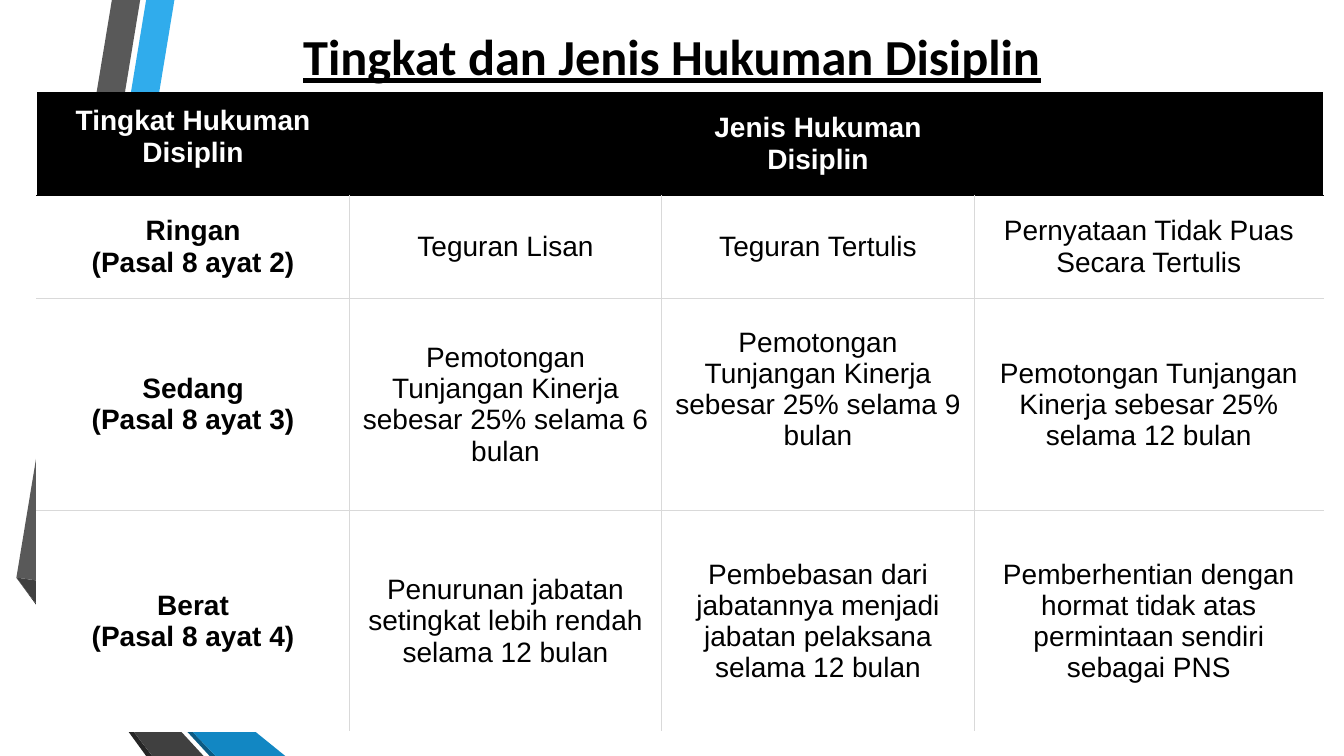
from lxml import etree
from pptx import Presentation
from pptx.dml.color import RGBColor
from pptx.enum.text import MSO_ANCHOR as Anchor, PP_ALIGN as Align
from pptx.oxml.ns import qn
from pptx.util import Pt

BLACK = RGBColor(0x00, 0x00, 0x00)
WHITE = RGBColor(0xFF, 0xFF, 0xFF)
RULE_GREY = RGBColor(0xD9, 0xD9, 0xD9)
SKY = RGBColor(0x30, 0xAC, 0xEC)
BLUE = RGBColor(0x12, 0x87, 0xC3)
NAVY = RGBColor(0x0C, 0x5A, 0x82)
GREY = RGBColor(0x59, 0x59, 0x59)
DARK_GREY = RGBColor(0x40, 0x40, 0x40)
CHARCOAL = RGBColor(0x26, 0x26, 0x26)

SLIDE_WIDTH, SLIDE_HEIGHT = 960, 540
CELL_MARGIN = 9.36

# Folded ribbons at the left edge, from back to front
RIBBONS = [
    (SKY, [(36, 416.2), (55.4, 419.8), (124.6, 0), (104.4, 0)]),
    (GREY, [(100.1, 0), (79.9, 0), (11.7, 412.6), (31.7, 415.4)]),
    (CHARCOAL, [(11.7, 412.6), (104.4, SLIDE_HEIGHT), (108.7, SLIDE_HEIGHT)]),
    (NAVY, [(36, 416.9), (149.8, SLIDE_HEIGHT), (154.1, SLIDE_HEIGHT)]),
    (BLUE, [(36, 416.9), (154.1, SLIDE_HEIGHT), (203.8, SLIDE_HEIGHT),
            (55.4, 419.8), (36, 416.2)]),
    (DARK_GREY, [(145.4, SLIDE_HEIGHT), (34.6, 419.8), (31, 415.4),
                 (11.7, 412.6), (108.7, SLIDE_HEIGHT)]),
]

COLUMN_WIDTHS = [223.2, 223.2, 223.2, 249.4]
ROW_HEIGHTS = [73.5, 73.5, 152, 157.5]
ROWS = [
    ["Tingkat Hukuman Disiplin", "", "Jenis Hukuman Disiplin", ""],
    ["Ringan\n(Pasal 8 ayat 2)", "Teguran Lisan", "Teguran Tertulis",
     "Pernyataan Tidak Puas Secara Tertulis"],
    ["Sedang\n(Pasal 8 ayat 3)",
     "Pemotongan Tunjangan Kinerja sebesar 25% selama 6 bulan",
     "Pemotongan Tunjangan Kinerja sebesar 25% selama 9 bulan",
     "Pemotongan Tunjangan Kinerja sebesar 25% selama 12 bulan"],
    ["Berat\n(Pasal 8 ayat 4)",
     "Penurunan jabatan setingkat lebih rendah selama 12 bulan",
     "Pembebasan dari jabatannya menjadi jabatan pelaksana selama 12 bulan",
     "Pemberhentian dengan hormat tidak atas permintaan sendiri sebagai PNS"],
]


def add_border(cell, side, color):
    """Draw one cell edge; side is L, R, T or B. Call before filling the cell."""
    properties = cell._tc.get_or_add_tcPr()
    line = etree.SubElement(properties, qn(f"a:ln{side}"), w=str(Pt(0.75)))
    fill = etree.SubElement(line, qn("a:solidFill"))
    etree.SubElement(fill, qn("a:srgbClr"), val=str(color))


deck = Presentation()
deck.slide_width, deck.slide_height = Pt(SLIDE_WIDTH), Pt(SLIDE_HEIGHT)
page = deck.slides.add_slide(deck.slide_layouts[5])

for color, points in RIBBONS:
    corners = [(Pt(x), Pt(y)) for x, y in points]
    builder = page.shapes.build_freeform(*corners[0], scale=1.0)
    builder.add_line_segments(corners[1:], close=True)
    ribbon = builder.convert_to_shape()
    ribbon.shadow.inherit = False
    ribbon.fill.solid()
    ribbon.fill.fore_color.rgb = color
    ribbon.line.fill.background()

frame = page.shapes.add_table(len(ROWS), len(COLUMN_WIDTHS), Pt(26.3), Pt(66),
                              Pt(sum(COLUMN_WIDTHS)), Pt(sum(ROW_HEIGHTS)))
table = frame.table
table.horz_banding = False
for column, width in zip(table.columns, COLUMN_WIDTHS):
    column.width = Pt(width)
for row, height in zip(table.rows, ROW_HEIGHTS):
    row.height = Pt(height)

last_row, last_column = len(ROWS) - 1, len(COLUMN_WIDTHS) - 1
for i, texts in enumerate(ROWS):
    is_header = i == 0
    for j, text in enumerate(texts):
        cell = table.cell(i, j)
        rule = BLACK if is_header else RULE_GREY
        if j > 0:
            add_border(cell, "L", rule)
        if j < last_column:
            add_border(cell, "R", rule)
        add_border(cell, "T", BLACK if i <= 1 else RULE_GREY)
        if i < last_row:
            add_border(cell, "B", rule)
        cell.fill.solid()
        cell.fill.fore_color.rgb = BLACK if is_header else WHITE
        cell.margin_left = cell.margin_right = Pt(CELL_MARGIN)
        cell.margin_top = cell.margin_bottom = Pt(CELL_MARGIN)
        cell.vertical_anchor = Anchor.TOP if i == j == 0 else Anchor.MIDDLE
        if not text:
            continue
        for k, line_text in enumerate(text.split("\n")):
            body = cell.text_frame
            para = body.paragraphs[0] if k == 0 else body.add_paragraph()
            para.alignment = Align.CENTER
            span = para.add_run()
            span.text = line_text
            span.font.name = "Arial"
            span.font.size = Pt(20)
            span.font.bold = is_header or j == 0
            span.font.color.rgb = WHITE if is_header else BLACK

# The nine-month cut sits slightly above the middle of its cell
table.cell(2, 2).margin_bottom = Pt(CELL_MARGIN + 22)

title = page.shapes.title
title.left, title.top, title.width, title.height = Pt(75), Pt(16.5), Pt(810), Pt(46)
title.text_frame.vertical_anchor = Anchor.MIDDLE
para = title.text_frame.paragraphs[0]
para.alignment = Align.CENTER
span = para.add_run()
span.text = "Tingkat dan Jenis Hukuman Disiplin"
span.font.name = "Calibri"
span.font.size = Pt(36)
span.font.bold = True
span.font.underline = True
span.font.color.rgb = BLACK

deck.save("out.pptx")
